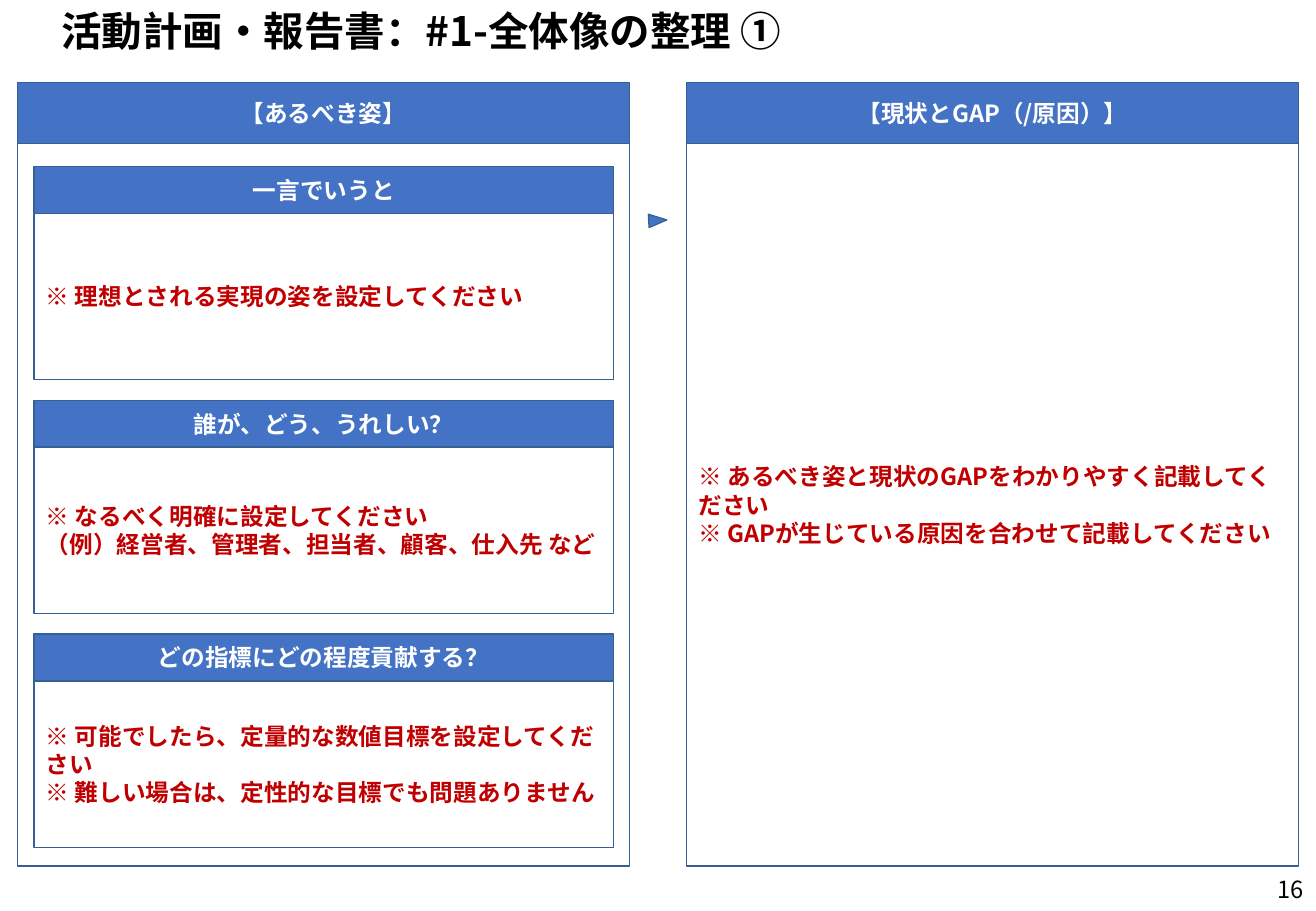
from lxml.etree import SubElement
from pptx import Presentation
from pptx.dml.color import RGBColor
from pptx.enum.shapes import MSO_SHAPE
from pptx.enum.text import MSO_ANCHOR, PP_ALIGN
from pptx.oxml.ns import qn
from pptx.util import Cm, Pt

FONT = "Noto Sans CJK JP"
BLUE = RGBColor(0x44, 0x72, 0xC4)
BORDER = RGBColor(0x37, 0x60, 0x92)
RED = RGBColor(0xC0, 0x00, 0x00)
WHITE = RGBColor(0xFF, 0xFF, 0xFF)
BLACK = RGBColor(0x00, 0x00, 0x00)

SLIDE_W, SLIDE_H = 27.51, 19.05
PANEL_W, PANEL_TOP, PANEL_HEADER_H, PANEL_BODY_H = 12.8, 1.73, 1.27, 15.11
IDEAL_LEFT, GAP_LEFT = 0.36, 14.35
CARD_LEFT, CARD_W, CARD_TOP, CARD_PITCH = 0.71, 12.12, 3.48, 4.89
CARD_HEADER_H, CARD_BODY_H = 0.98, 3.48

CARDS = [
    ("一言でいうと", ["※ 理想とされる実現の姿を設定してください"]),
    ("誰が、どう、うれしい？",
     ["※ なるべく明確に設定してください",
      "（例）経営者、管理者、担当者、顧客、仕入先 など"]),
    ("どの指標にどの程度貢献する？",
     ["※ 可能でしたら、定量的な数値目標を設定してください",
      "※ 難しい場合は、定性的な目標でも問題ありません"]),
]
GAP_NOTES = ["※ あるべき姿と現状のGAPをわかりやすく記載してください",
             "※ GAPが生じている原因を合わせて記載してください"]


class PlanSlide:
    def __init__(self, slide):
        self.shapes = slide.shapes

    def add_lines(self, frame, lines, color, align=PP_ALIGN.LEFT, size=14, bold=True):
        frame.word_wrap = True
        frame.vertical_anchor = MSO_ANCHOR.MIDDLE
        style = {"name": FONT, "size": Pt(size), "bold": bold}
        for index, line in enumerate(lines):
            paragraph = frame.paragraphs[0] if index == 0 else frame.add_paragraph()
            paragraph.alignment = align
            run = paragraph.add_run()
            run.text = line
            for attribute, value in style.items():
                setattr(run.font, attribute, value)
            run.font.color.rgb = color
            SubElement(run.font._element, qn("a:ea"), typeface=FONT)

    def text(self, box, line, **style):
        frame = self.shapes.add_textbox(*map(Cm, box)).text_frame
        self.add_lines(frame, [line], BLACK, **style)
        return frame

    def outlined(self, kind, box, fill):
        shape = self.shapes.add_shape(kind, *map(Cm, box))
        shape.shadow.inherit = False
        shape.fill.solid()
        shape.fill.fore_color.rgb = fill
        shape.line.color.rgb = BORDER
        shape.line.width = Pt(0.75)
        return shape

    def panel(self, left, top, width, header_h, body_h, heading, notes=()):
        """Draw a blue heading bar with a white box of notes under it."""
        header = self.outlined(MSO_SHAPE.RECTANGLE, (left, top, width, header_h), BLUE)
        self.add_lines(header.text_frame, [heading], WHITE, PP_ALIGN.CENTER)
        body = self.outlined(MSO_SHAPE.RECTANGLE,
                             (left, top + header_h, width, body_h), WHITE)
        self.add_lines(body.text_frame, notes, RED)

    def arrow(self, box, rotation):
        self.outlined(MSO_SHAPE.ISOSCELES_TRIANGLE, box, BLUE).rotation = rotation


def main():
    deck = Presentation()
    deck.slide_width, deck.slide_height = Cm(SLIDE_W), Cm(SLIDE_H)
    plan = PlanSlide(deck.slides.add_slide(deck.slide_layouts[6]))

    plan.text((21.13, 18.14, 6.38, 0.91), "16", align=PP_ALIGN.RIGHT, bold=False)
    title = plan.text((0.18, 0, 27.18, 1.27), "活動計画・報告書：#1-全体像の整理 ①", size=24)
    title.margin_left = Cm(1.1)

    panel_size = (PANEL_TOP, PANEL_W, PANEL_HEADER_H, PANEL_BODY_H)
    plan.panel(GAP_LEFT, *panel_size, "【現状とGAP（/原因）】", GAP_NOTES)
    plan.panel(IDEAL_LEFT, *panel_size, "【あるべき姿】")
    for row, (heading, notes) in enumerate(CARDS):
        plan.panel(CARD_LEFT, CARD_TOP + row * CARD_PITCH, CARD_W,
                   CARD_HEADER_H, CARD_BODY_H, heading, notes)
    plan.arrow((13.61, 4.42, 0.28, 0.38), 87)

    deck.save("out.pptx")


if __name__ == "__main__":
    main()
